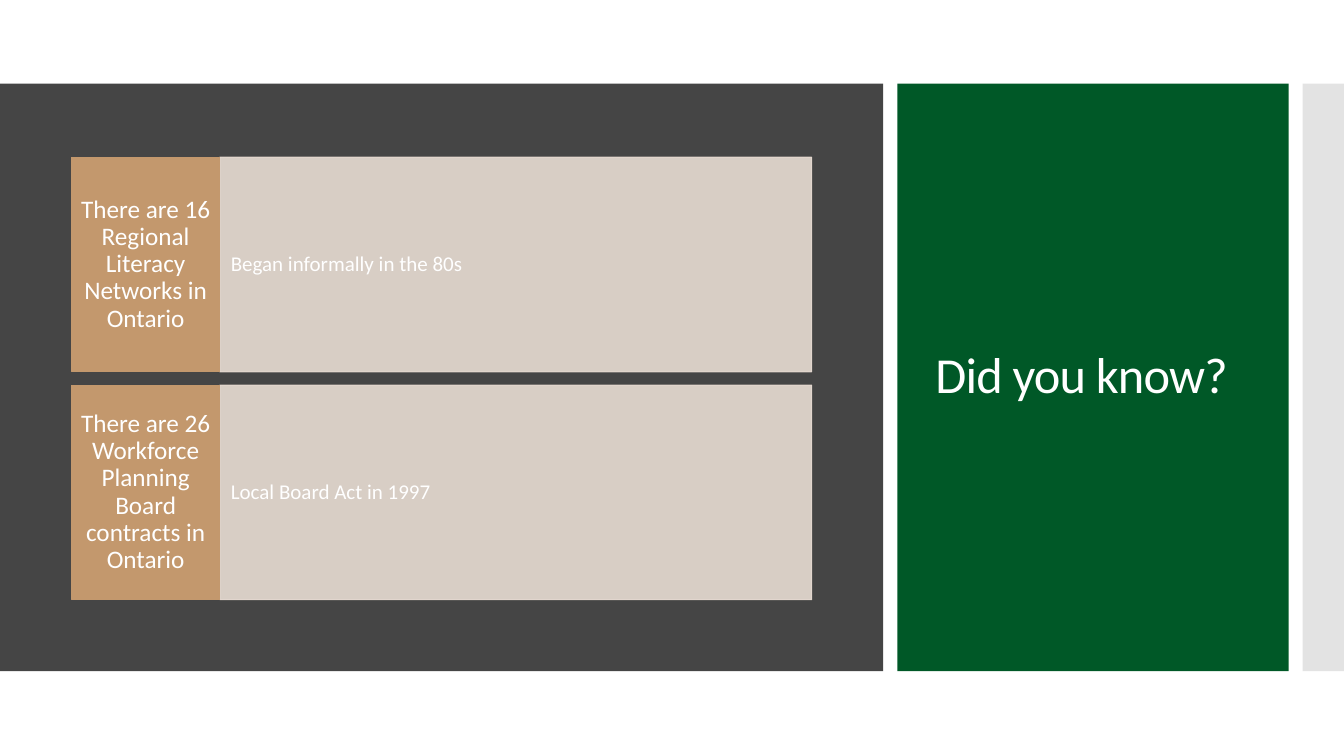
from dataclasses import dataclass

from lxml import etree
from pptx import Presentation
from pptx.dml.color import RGBColor
from pptx.enum import shapes, text
from pptx.oxml import ns
from pptx.util import Inches, Pt

WHITE = RGBColor(0xFF, 0xFF, 0xFF)
CHARCOAL = RGBColor(0x45, 0x45, 0x45)
GREEN = RGBColor(0x00, 0x58, 0x27)
GRAY = RGBColor(0xC8, 0xC8, 0xC8)
TAN = RGBColor(0xC3, 0x98, 0x6D)
BEIGE = RGBColor(0xE9, 0xDD, 0xD4)

PANEL_TOP, PANEL_HEIGHT = 0.83, 5.83
ROW_TOP, ROW_HEIGHT, ROW_STEP = 1.56, 2.13, 2.26
LABEL_LEFT, LABEL_WIDTH, DETAIL_WIDTH = 0.71, 1.47, 5.87


@dataclass
class Box:
    left: float
    top: float
    width: float
    height: float
    color: RGBColor
    opacity: int = 100
    outlined: bool = False


@dataclass
class Caption:
    words: str
    size: float
    align: text.PP_ALIGN = text.PP_ALIGN.LEFT
    inset_x: float = 0.1
    inset_y: float = 0.05
    space_after: float = 0


@dataclass
class Fact:
    label: str
    detail: str


PANELS = [
    Box(0, PANEL_TOP, 8.76, PANEL_HEIGHT, CHARCOAL),
    Box(8.9, PANEL_TOP, 3.88, PANEL_HEIGHT, GREEN),
    Box(12.92, PANEL_TOP, 0.42, PANEL_HEIGHT, GRAY, opacity=50),
]
FACTS = [
    Fact("There are 16 Regional Literacy Networks in Ontario", "Began informally in the 80s"),
    Fact("There are 26 Workforce Planning Board contracts in Ontario", "Local Board Act in 1997"),
]


def set_opacity(shape, percent: int) -> None:
    for color in shape._element.spPr.iter(ns.qn("a:srgbClr")):
        etree.SubElement(color, ns.qn("a:alpha"), val=str(percent * 1000))


def add_box(slide, box: Box):
    shape = slide.shapes.add_shape(
        shapes.MSO_SHAPE.RECTANGLE,
        Inches(box.left), Inches(box.top), Inches(box.width), Inches(box.height))
    shape.shadow.inherit = False
    shape.fill.solid()
    shape.fill.fore_color.rgb = box.color
    if box.outlined:
        shape.line.color.rgb = box.color
        shape.line.width = Pt(0.75)
    else:
        shape.line.fill.background()
    if box.opacity < 100:
        set_opacity(shape, box.opacity)
    return shape


def write(shape, caption: Caption):
    frame = shape.text_frame
    frame.text = caption.words
    frame.word_wrap = True
    frame.vertical_anchor = text.MSO_ANCHOR.MIDDLE
    frame.margin_left = frame.margin_right = Inches(caption.inset_x)
    frame.margin_top = frame.margin_bottom = Inches(caption.inset_y)
    paragraph = frame.paragraphs[0]
    paragraph.alignment = caption.align
    paragraph.line_spacing = 0.9
    paragraph.space_after = Pt(caption.space_after)
    run = paragraph.runs[0]
    run.font.name = "Calibri"
    run.font.size = Pt(caption.size)
    run.font.color.rgb = WHITE
    return run


def add_fact(slide, fact: Fact, top: float) -> None:
    detail = add_box(slide, Box(LABEL_LEFT + LABEL_WIDTH, top, DETAIL_WIDTH, ROW_HEIGHT,
                                BEIGE, opacity=90, outlined=True))
    write(detail, Caption(fact.detail, 15, inset_x=0.11, inset_y=0.54, space_after=5.25))
    label = add_box(slide, Box(LABEL_LEFT, top, LABEL_WIDTH, ROW_HEIGHT, TAN, outlined=True))
    write(label, Caption(fact.label, 18, text.PP_ALIGN.CENTER, 0.08, 0.21, 6.3))


def main() -> None:
    presentation = Presentation()
    presentation.slide_width, presentation.slide_height = Inches(13.33), Inches(7.5)
    slide = presentation.slides.add_slide(presentation.slide_layouts[6])
    slide.background.fill.solid()
    slide.background.fill.fore_color.rgb = WHITE

    # Background panels
    for panel in PANELS:
        add_box(slide, panel)

    # Title
    title = slide.shapes.add_textbox(Inches(9.18), Inches(1.23), Inches(3.22), Inches(5.03))
    title_run = write(title, Caption("Did you know?", 36))
    title_run.font._element.set("spc", "-60")

    # Fact rows
    for index, fact in enumerate(FACTS):
        add_fact(slide, fact, ROW_TOP + index * ROW_STEP)

    presentation.save("out.pptx")


if __name__ == "__main__":
    main()
